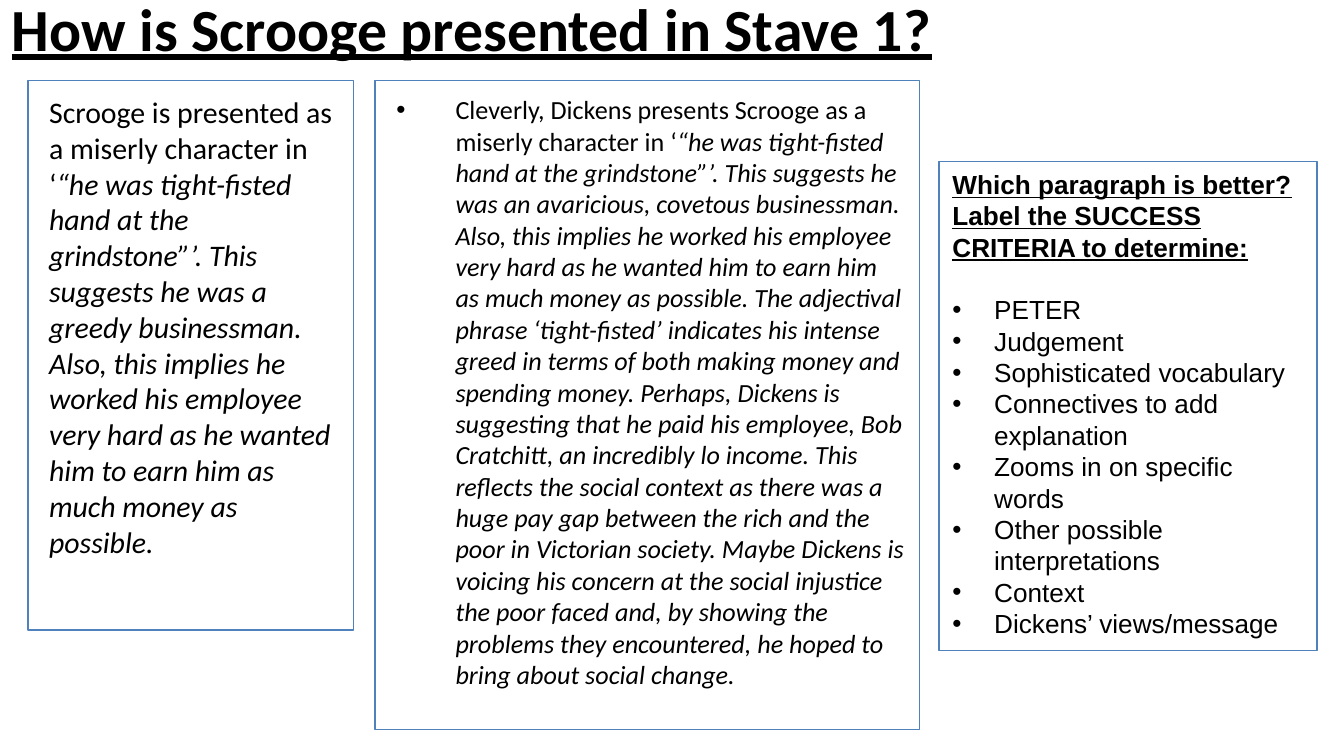
from dataclasses import dataclass

import pptx
import pptx.dml.color
import pptx.enum.shapes
import pptx.enum.text
import pptx.util
from lxml import etree
from pptx.oxml.ns import qn
from pptx.util import Cm, Pt

BLACK = pptx.dml.color.RGBColor(0x00, 0x00, 0x00)
BLUE = pptx.dml.color.RGBColor(0x4F, 0x81, 0xBD)
LINE_FACTOR = 1.2
ALIGN = pptx.enum.text.PP_ALIGN
ANCHOR = pptx.enum.text.MSO_ANCHOR


@dataclass
class Panel:
    left: float
    top: float
    width: float
    height: float
    vertical_inset: float = 0.25


TITLE = Panel(-2.51, 0, 22.86, 1.04)
SHORT_ANSWER = Panel(0.53, 1.52, 6.15, 10.39)
LONG_ANSWER = Panel(7.09, 1.52, 10.29, 12.27)
CRITERIA = Panel(17.75, 3.05, 7.14, 9.25, vertical_inset=0.13)

SHORT_OPENING = "Scrooge is presented as a miserly character in ‘"
SHORT_QUOTE = (
    "“he was tight-fisted hand at the grindstone”’. This suggests he was a greedy "
    "businessman. Also, this implies he worked his employee very hard as he wanted "
    "him to earn him as much money as possible."
)
LONG_OPENING = "Cleverly, Dickens presents Scrooge as a miserly character in ‘"
LONG_QUOTE = (
    "“he was tight-fisted hand at the grindstone”’. This suggests he was an "
    "avaricious, covetous businessman. Also, this implies he worked his employee "
    "very hard as he wanted him to earn him as much money as possible. The "
    "adjectival phrase ‘tight-fisted’ indicates his intense greed in terms of both "
    "making money and spending money. Perhaps, Dickens is suggesting that he paid "
    "his employee, Bob Cratchitt, an incredibly lo income. This reflects the social "
    "context as there was a huge pay gap between the rich and the poor in Victorian "
    "society. Maybe Dickens is voicing his concern at the social injustice the poor "
    "faced and, by showing the problems they encountered, he hoped to bring about "
    "social change."
)
CRITERIA_HEADING = "Which paragraph is better? Label the SUCCESS CRITERIA to determine:"
CRITERIA_ITEMS = (
    "PETER",
    "Judgement",
    "Sophisticated vocabulary",
    "Connectives to add explanation",
    "Zooms in on specific words",
    "Other possible interpretations",
    "Context",
    "Dickens’ views/message",
)


def set_frame(shape, panel: Panel, anchor):
    """Set insets, wrapping and anchor, and return the text frame."""
    frame = shape.text_frame
    frame.word_wrap = True
    frame.vertical_anchor = anchor
    frame.margin_left = frame.margin_right = Cm(0.25)
    frame.margin_top = frame.margin_bottom = Cm(panel.vertical_inset)
    return frame


def add_panel(slide, panel: Panel):
    """Draw an outlined panel and return its text frame."""
    shape = slide.shapes.add_shape(
        pptx.enum.shapes.MSO_SHAPE.RECTANGLE,
        Cm(panel.left), Cm(panel.top), Cm(panel.width), Cm(panel.height),
    )
    shape.shadow.inherit = False
    shape.fill.background()
    shape.line.color.rgb = BLUE
    shape.line.width = Pt(0.75)
    return set_frame(shape, panel, ANCHOR.TOP)


def add_run(paragraph, text: str, *, size: float, font: str = "Calibri",
            bold: bool = False, italic: bool = False, underline: bool = False) -> None:
    """Append formatted text to a paragraph."""
    run = paragraph.add_run()
    run.text = text
    run.font.size = Pt(size)
    run.font.name = font
    run.font.bold = bold
    run.font.italic = italic
    run.font.underline = underline
    run.font.color.rgb = BLACK


def format_paragraph(paragraph, size: float, *, margin: float = 0, indent: float = 0,
                     bullet: bool = False, space_after: float = 0) -> None:
    """Set spacing and indents in centimetres, with an optional bullet."""
    paragraph.alignment = ALIGN.LEFT
    paragraph.line_spacing = Pt(size * LINE_FACTOR)
    paragraph.space_after = Pt(space_after)
    properties = paragraph._p.get_or_add_pPr()
    properties.set("marL", str(Cm(margin)))
    properties.set("indent", str(Cm(indent)))
    if bullet:
        etree.SubElement(properties, qn("a:buFont")).set("typeface", "Arial")
        etree.SubElement(properties, qn("a:buChar")).set("char", "•")


def add_answer(slide, panel: Panel, opening: str, quote: str, size: float,
               **layout) -> None:
    """Draw a sample answer: upright opening, then italic text."""
    paragraph = add_panel(slide, panel).paragraphs[0]
    format_paragraph(paragraph, size, **layout)
    add_run(paragraph, opening, size=size)
    add_run(paragraph, quote, size=size, italic=True)


def main() -> None:
    presentation = pptx.Presentation()
    presentation.slide_width = Cm(25.4)
    presentation.slide_height = Cm(14.29)
    slide = presentation.slides.add_slide(presentation.slide_layouts[6])

    # Title
    title = slide.shapes.add_textbox(
        Cm(TITLE.left), Cm(TITLE.top), Cm(TITLE.width), Cm(TITLE.height))
    paragraph = set_frame(title, TITLE, ANCHOR.MIDDLE).paragraphs[0]
    paragraph.alignment = ALIGN.CENTER
    add_run(paragraph, "How is Scrooge presented in Stave 1?",
            size=32, bold=True, underline=True)

    # Sample answers
    add_answer(slide, SHORT_ANSWER, SHORT_OPENING, SHORT_QUOTE, 16, margin=0.15)
    add_answer(slide, LONG_ANSWER, LONG_OPENING, LONG_QUOTE, 14,
               margin=1.27, indent=-1.12, bullet=True)

    # Success criteria
    size = 14
    frame = add_panel(slide, CRITERIA)
    heading = frame.paragraphs[0]
    format_paragraph(heading, size, space_after=size * LINE_FACTOR)
    add_run(heading, CRITERIA_HEADING, size=size, font="Arial",
            bold=True, underline=True)
    for item in CRITERIA_ITEMS:
        paragraph = frame.add_paragraph()
        format_paragraph(paragraph, size, margin=0.79, indent=-0.79, bullet=True)
        add_run(paragraph, item, size=size, font="Arial")

    presentation.save("out.pptx")


if __name__ == "__main__":
    main()
